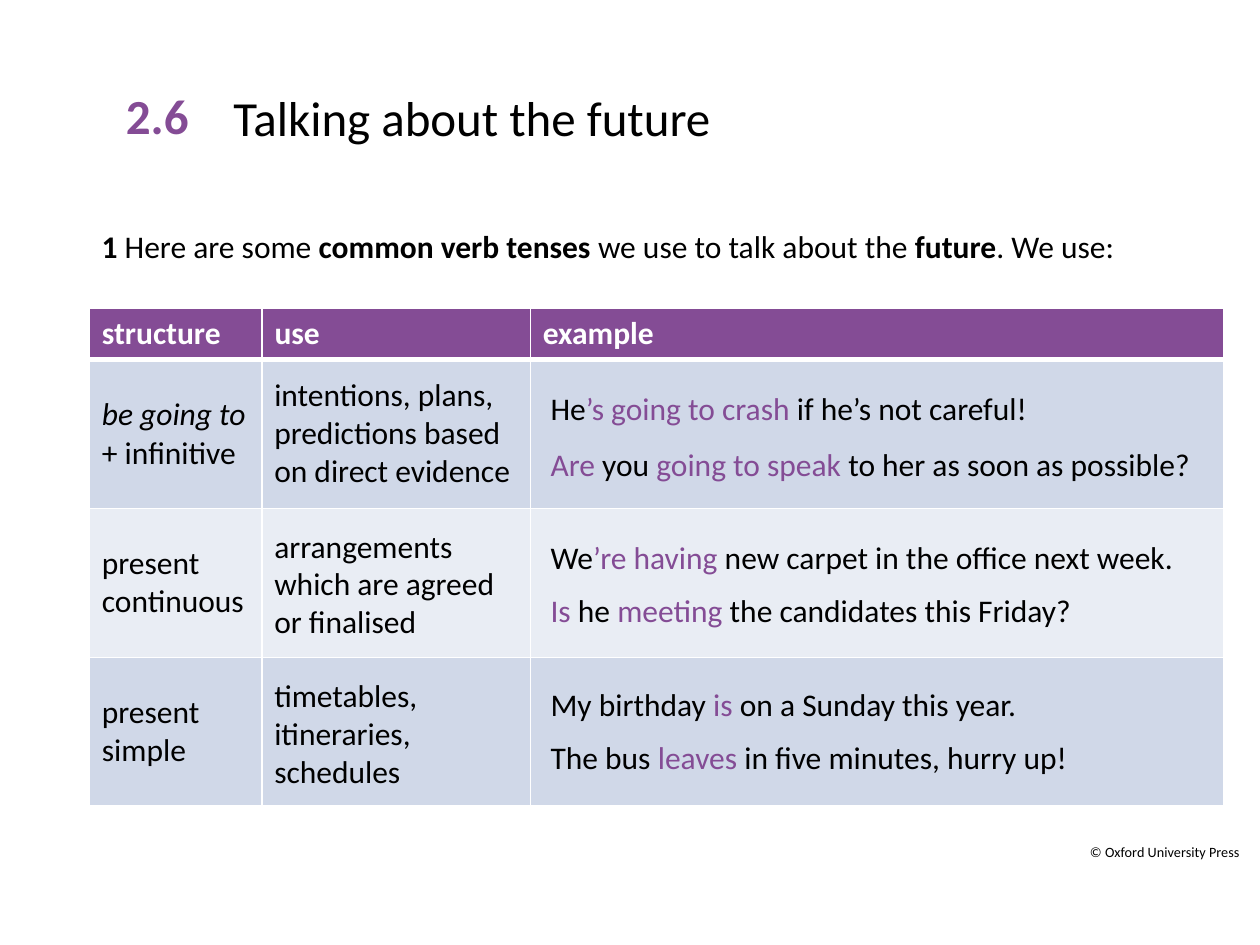
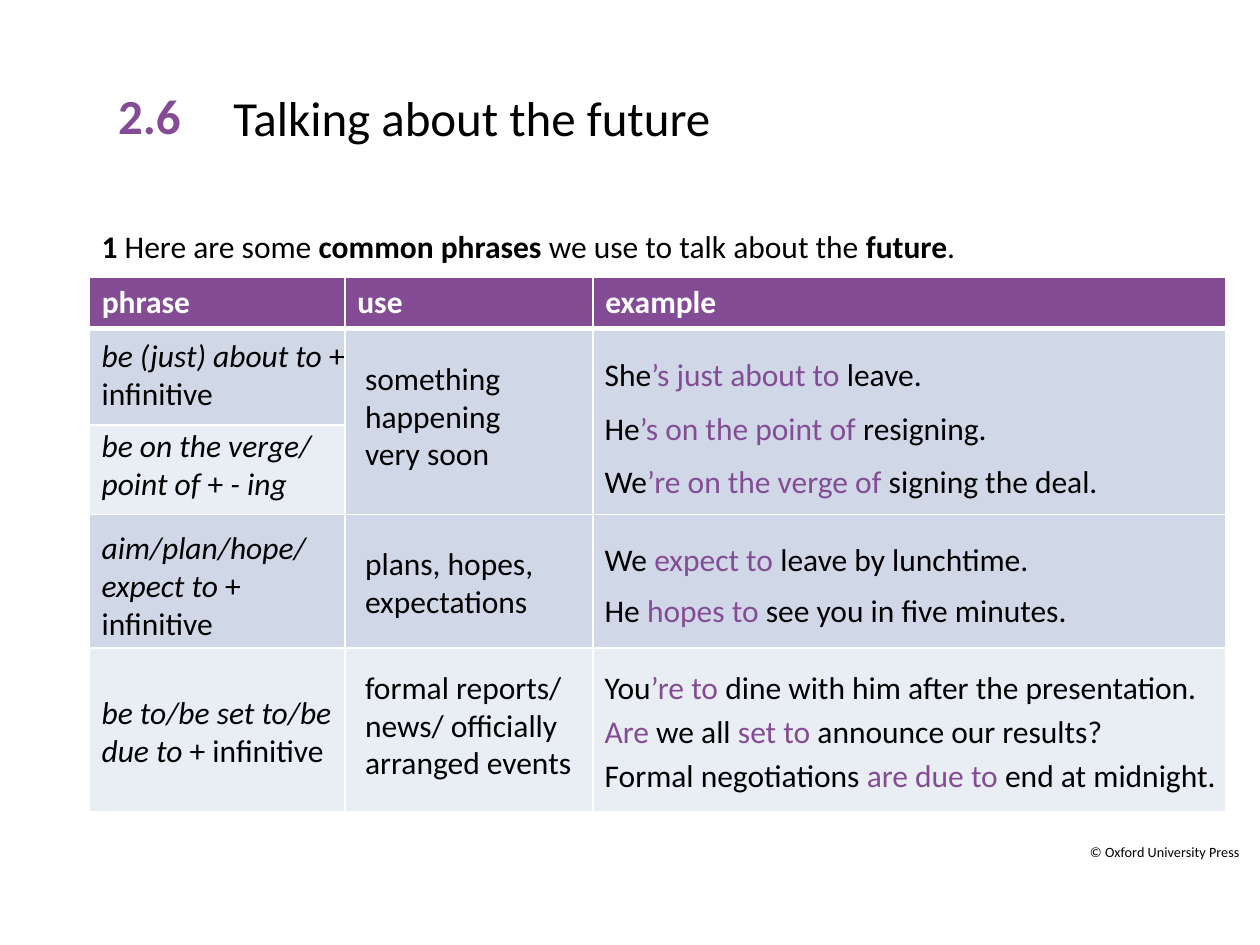
from dataclasses import dataclass
from typing import NamedTuple

from lxml import etree
from pptx import Presentation
from pptx.dml.color import RGBColor
from pptx.enum.text import MSO_ANCHOR, MSO_AUTO_SIZE, PP_ALIGN
from pptx.oxml.ns import qn
from pptx.util import Cm, Pt

PURPLE = RGBColor(0x84, 0x4C, 0x95)
BLACK = RGBColor(0x00, 0x00, 0x00)
WHITE = RGBColor(0xFF, 0xFF, 0xFF)
BAND_DARK = RGBColor(0xD0, 0xD8, 0xE8)
BAND_LIGHT = RGBColor(0xE9, 0xED, 0xF4)

MIDDLE = MSO_ANCHOR.MIDDLE
TOP = MSO_ANCHOR.TOP
NO_AUTOFIT = MSO_AUTO_SIZE.NONE
LEFT = PP_ALIGN.LEFT
RIGHT = PP_ALIGN.RIGHT

FONT = "Calibri"
TITLE_SIZE = 28
BODY_SIZE = 18
FOOTER_SIZE = 14
MARGIN = 1.8
TITLE_ONLY = 5


class Span(NamedTuple):
    text: str
    colour: RGBColor = BLACK
    bold: bool = False
    italic: bool = False


Paragraph = tuple[Span, ...]


@dataclass
class Note:
    """Text laid over a table cell; lengths in centimetres."""
    left: float
    top: float
    width: float
    paragraphs: list[Paragraph]
    lines: int = 1

    @property
    def height(self) -> float:
        return round(0.25 + 0.77 * self.lines, 2)


@dataclass
class Grid:
    """Table geometry in centimetres, with header words and row bands."""
    top: float
    columns: list[float]
    rows: list[float]
    header: list[str]
    bands: list[RGBColor]
    first_column: list[Paragraph]
    merges: list[tuple[int, int, int, int]]


@dataclass
class GrammarPage:
    number_left: float
    intro_height: float
    intro: Paragraph
    grid: Grid
    notes: list[Note]


def plain(text: str) -> Span:
    return Span(text)


def key(text: str) -> Span:
    return Span(text, colour=PURPLE)


def bold(text: str) -> Span:
    return Span(text, bold=True)


def italic(text: str) -> Span:
    return Span(text, italic=True)


def write(frame, paragraphs: list[Paragraph], size: int = BODY_SIZE, align=LEFT) -> None:
    for index, spans in enumerate(paragraphs):
        para = frame.paragraphs[0] if index == 0 else frame.add_paragraph()
        para.alignment = align
        for span in spans:
            run = para.add_run()
            run.text = span.text
            run.font.name = FONT
            run.font.size = Pt(size)
            run.font.bold = span.bold
            run.font.italic = span.italic
            run.font.color.rgb = span.colour


def add_text(page, left: float, top: float, width: float, height: float,
             paragraphs: list[Paragraph], size: int = BODY_SIZE, align=LEFT):
    box = page.shapes.add_textbox(Cm(left), Cm(top), Cm(width), Cm(height))
    frame = box.text_frame
    frame.word_wrap = True
    frame.vertical_anchor = TOP
    write(frame, paragraphs, size, align)
    return box


def add_heading(page, number_left: float) -> None:
    title = page.shapes.title
    title.left, title.top = Cm(4.45), Cm(0.76)
    title.width, title.height = Cm(11), Cm(3.18)
    title.text_frame.auto_size = NO_AUTOFIT
    title.text_frame.vertical_anchor = MIDDLE
    write(title.text_frame, [(plain("Talking about the future"),)], TITLE_SIZE)
    add_text(page, number_left, 1.6, 2.31, 1.45,
             [(Span("2.6", PURPLE, bold=True),)], TITLE_SIZE)


def add_footer(page) -> None:
    box = add_text(page, 21.23, 16.81, 4.01, 0.66,
                   [(plain("© Oxford University Press"),)], FOOTER_SIZE, RIGHT)
    run = box.text_frame.paragraphs[0].runs[0]
    run._r.get_or_add_rPr().set("baseline", "30000")


def set_borders(cell, top_width: float, bottom_width: float) -> None:
    properties = cell._tc.get_or_add_tcPr()
    widths = {"lnL": 1, "lnR": 1, "lnT": top_width, "lnB": bottom_width}
    for side, width in widths.items():
        line = etree.SubElement(properties, qn(f"a:{side}"), w=str(Pt(width)))
        fill = etree.SubElement(line, qn("a:solidFill"))
        etree.SubElement(fill, qn("a:srgbClr"), val=str(WHITE))


def add_grid(page, grid: Grid) -> None:
    frame = page.shapes.add_table(
        len(grid.rows), len(grid.columns), Cm(MARGIN), Cm(grid.top),
        Cm(sum(grid.columns)), Cm(sum(grid.rows)))
    table = frame.table
    table.first_row = False
    table.horz_banding = False
    for column, width in zip(table.columns, grid.columns):
        column.width = Cm(width)
    for row, height in zip(table.rows, grid.rows):
        row.height = Cm(height)

    for row_index, colour in enumerate([PURPLE, *grid.bands]):
        for cell in table.rows[row_index].cells:
            set_borders(cell, 3 if row_index == 1 else 1, 3 if row_index == 0 else 1)
            cell.fill.solid()
            cell.fill.fore_color.rgb = colour
    for top, left, bottom, right in grid.merges:
        table.cell(top, left).merge(table.cell(bottom, right))

    for column_index, word in enumerate(grid.header):
        write(table.cell(0, column_index).text_frame, [(Span(word, WHITE, bold=True),)])
    for row_index, paragraph in enumerate(grid.first_column, start=1):
        cell = table.cell(row_index, 0)
        cell.vertical_anchor = MIDDLE
        write(cell.text_frame, [paragraph])


def build_page(deck, content: GrammarPage) -> None:
    page = deck.slides.add_slide(deck.slide_layouts[TITLE_ONLY])
    add_footer(page)
    add_text(page, MARGIN, 4.45, 22.33, content.intro_height, [content.intro])
    add_heading(page, content.number_left)
    add_grid(page, content.grid)
    for note in content.notes:
        add_text(page, note.left, note.top, note.width, note.height, note.paragraphs)


TENSE_USE_LEFT = 5.28
TENSE_EXAMPLE_LEFT = 10.85
TENSES = GrammarPage(
    number_left=2.29,
    intro_height=11.61,
    intro=(bold("1"), plain(" Here are some "), bold("common verb tenses "),
           plain("we use to talk about the "), bold("future"), plain(". We use:")),
    grid=Grid(
        top=6.22,
        columns=[3.48, 5.41, 13.97],
        rows=[1.03, 3, 3, 3],
        header=["structure", "use", "example"],
        bands=[BAND_DARK, BAND_LIGHT, BAND_DARK],
        first_column=[
            (italic("be going to"), plain(" + infinitive")),
            (plain("present continuous"),),
            (plain("present simple"),),
        ],
        merges=[],
    ),
    notes=[
        Note(TENSE_EXAMPLE_LEFT, 7.72, 11.86, [
            (plain("He"), key("’s going to crash "), plain("if he’s not careful!"))]),
        Note(TENSE_EXAMPLE_LEFT, 8.84, 13.87, [
            (key("Are "), plain("you"), key(" going to speak "),
             plain("to her as soon as possible?"))]),
        Note(TENSE_EXAMPLE_LEFT, 10.72, 13.28, [
            (plain("We"), key("’re having "),
             plain("new carpet in the office next week."))]),
        Note(TENSE_EXAMPLE_LEFT, 11.79, 13.28, [
            (key("Is "), plain("he"), key(" meeting "),
             plain("the candidates this Friday?"))]),
        Note(TENSE_EXAMPLE_LEFT, 13.69, 13.87, [
            (plain("My birthday "), key("is"), plain(" on a Sunday this year."))]),
        Note(TENSE_EXAMPLE_LEFT, 14.76, 13.87, [
            (plain("The bus "), key("leaves "), plain("in five minutes, hurry up!"))]),
        Note(TENSE_USE_LEFT, 7.44, 5.54, [
            (plain("intentions, plans, predictions based on direct evidence"),)], 3),
        Note(TENSE_USE_LEFT, 10.49, 5.31, [
            (plain("arrangements which are agreed or finalised"),)], 3),
        Note(TENSE_USE_LEFT, 13.51, 5.31, [
            (plain("timetables, itineraries, schedules"),)], 3),
    ],
)

PHRASE_USE_LEFT = 7.11
PHRASE_EXAMPLE_LEFT = 11.94
PHRASES = GrammarPage(
    number_left=2.13,
    intro_height=14.2,
    intro=(bold("1"), plain(" Here are some "), bold("common phrases "),
           plain("we use to talk about the "), bold("future"), plain(".")),
    grid=Grid(
        top=5.59,
        columns=[5.15, 5, 12.75],
        rows=[1.03, 1.95, 1.8, 2.69, 3.3],
        header=["phrase", "use", "example"],
        bands=[BAND_DARK, BAND_LIGHT, BAND_DARK, BAND_LIGHT],
        first_column=[],
        merges=[(1, 1, 2, 1), (1, 2, 2, 2)],
    ),
    notes=[
        Note(PHRASE_EXAMPLE_LEFT, 7.04, 11.86, [
            (plain("She"), key("’s just about to "), plain("leave."))]),
        Note(PHRASE_EXAMPLE_LEFT, 8.13, 13.87, [
            (plain("He"), key("’s on the point of "), plain("resigning."))]),
        Note(PHRASE_EXAMPLE_LEFT, 9.19, 13.28, [
            (plain("We"), key("’re on the verge of "), plain("signing the deal."))]),
        Note(PHRASE_EXAMPLE_LEFT, 10.77, 10.44, [
            (plain("We "), key("expect to "), plain("leave by lunchtime."))]),
        Note(PHRASE_EXAMPLE_LEFT, 11.79, 10.13, [
            (plain("He "), key("hopes to "), plain("see you in five minutes."))]),
        Note(PHRASE_EXAMPLE_LEFT, 13.34, 12.75, [
            (plain("You"), key("’re to "),
             plain("dine with him after the presentation."))]),
        Note(PHRASE_EXAMPLE_LEFT, 14.22, 11.86, [
            (key("Are "), plain("we all "), key("set to "),
             plain("announce our results?"))]),
        Note(PHRASE_EXAMPLE_LEFT, 15.11, 13.28, [
            (plain("Formal negotiations "), key("are due to "),
             plain("end at midnight."))]),
        Note(MARGIN, 6.65, 6.35, [
            (italic("be (just) about to"), plain(" + infinitive"))], 2),
        Note(MARGIN, 8.46, 5.31, [
            (italic("be on the verge/ point of"), plain(" + "), italic("- ing"))], 2),
        Note(MARGIN, 10.52, 5.31, [
            (italic("aim/plan/hope/ expect to "), plain("+ infinitive"))], 3),
        Note(MARGIN, 13.84, 5.31, [
            (italic("be to/be set to/be due to"), plain(" + infinitive"))], 2),
        Note(PHRASE_USE_LEFT, 7.11, 4.55, [
            (plain("something happening"),), (plain("very soon"),)], 3),
        Note(PHRASE_USE_LEFT, 10.85, 3.96, [(plain("plans, hopes, expectations"),)], 2),
        Note(PHRASE_USE_LEFT, 13.34, 4.85, [
            (plain("formal reports/"),),
            (plain("news/ officially arranged events"),)], 3),
    ],
)


def main() -> None:
    deck = Presentation()
    deck.slide_width, deck.slide_height = Cm(25.4), Cm(19.05)
    for content in (TENSES, PHRASES):
        build_page(deck, content)
    deck.save("out.pptx")


if __name__ == "__main__":
    main()
